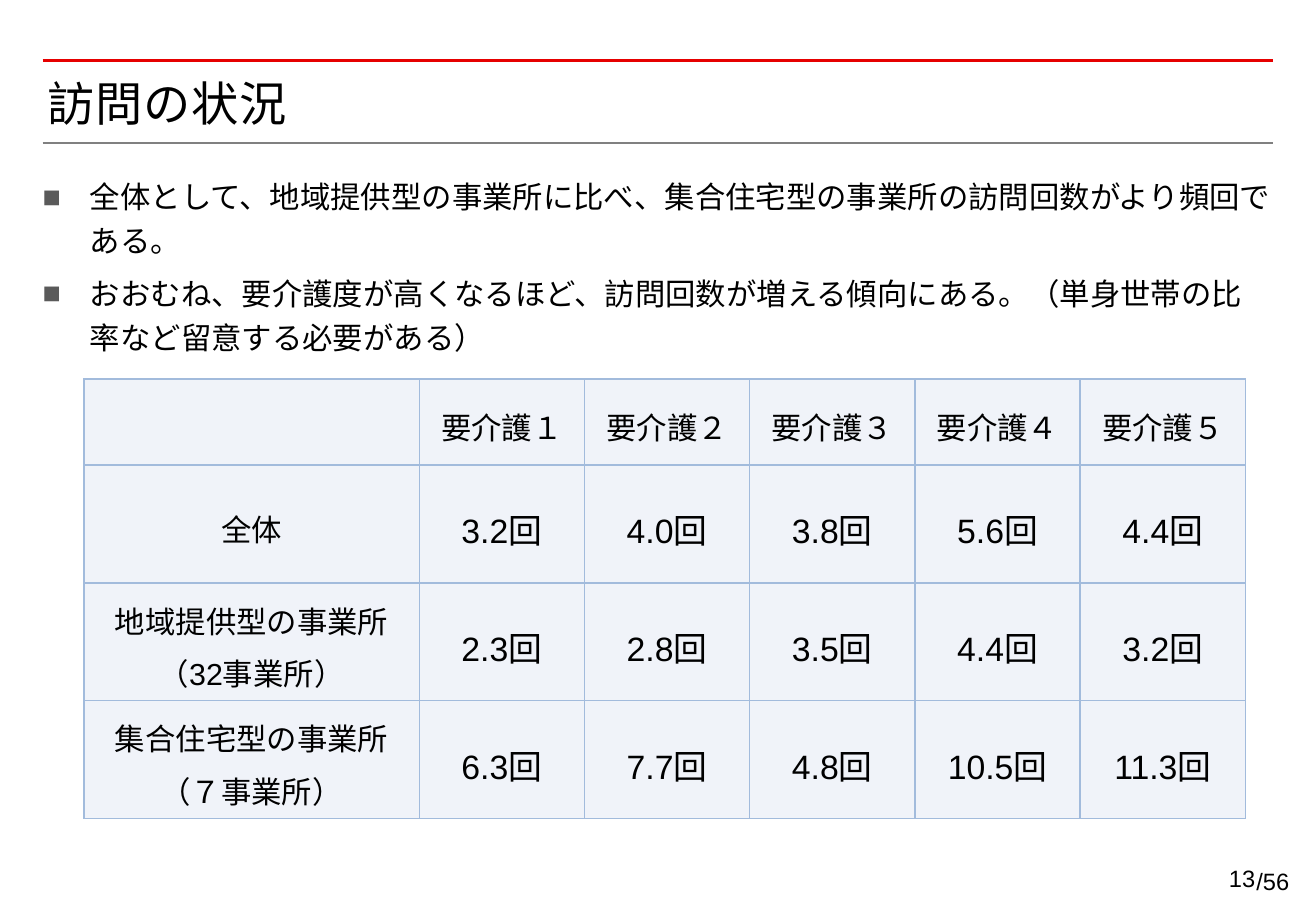
from lxml import etree
from pptx import Presentation
from pptx import util as u
from pptx.dml.color import RGBColor
from pptx.enum import shapes, text
from pptx.oxml import ns

COLORS = {"text": "000000", "red": "E60000", "gray": "808080", "bullet": "5A5A5A",
          "cell": "F0F3F9", "border": "A2BBDC"}
LATIN, JAPANESE = "Arial", "Noto Sans CJK JP"
CENTER, RIGHT = text.PP_ALIGN.CENTER, text.PP_ALIGN.RIGHT

POINTS = [
    "全体として、地域提供型の事業所に比べ、集合住宅型の事業所の訪問回数がより頻回である。",
    "おおむね、要介護度が高くなるほど、訪問回数が増える傾向にある。（単身世帯の比率など留意する必要がある）",
]
LEVELS = ["要介護１", "要介護２", "要介護３", "要介護４", "要介護５"]
VISITS = {
    "全体": ["3.2", "4.0", "3.8", "5.6", "4.4"],
    "地域提供型の事業所\v（32事業所）": ["2.3", "2.8", "3.5", "4.4", "3.2"],
    "集合住宅型の事業所\v（７事業所）": ["6.3", "7.7", "4.8", "10.5", "11.3"],
}


def color(name):
    return RGBColor.from_string(COLORS[name])


def add_xml(parent, tag, **attributes):
    return etree.SubElement(parent, ns.qn(tag), attributes)


def format_runs(para, size, font=LATIN):
    for span in para.runs:
        span.font.size = u.Pt(size)
        span.font.name = font
        span.font.color.rgb = color("text")


def add_text(slide, left, top, width, height, lines, size, font=LATIN,
             margins=(0, 0.05, 0, 0.05), align=None):
    box = slide.shapes.add_textbox(*map(u.Inches, (left, top, width, height)))
    frame = box.text_frame
    frame.word_wrap = True
    (frame.margin_left, frame.margin_top,
     frame.margin_right, frame.margin_bottom) = map(u.Inches, margins)
    frame.text = "\n".join(lines)
    for para in frame.paragraphs:
        para.alignment = align
        format_runs(para, size, font)
    return frame


def add_bullets(frame):
    for index, para in enumerate(frame.paragraphs):
        para.line_spacing = 1.2
        para.space_before = u.Pt(5.4 if index else 0)
        props = para._p.get_or_add_pPr()
        props.set("marL", str(u.Inches(0.39)))
        props.set("indent", str(u.Inches(-0.39)))
        add_xml(add_xml(props, "a:buClr"), "a:srgbClr", val=COLORS["bullet"])
        add_xml(props, "a:buFont", typeface=LATIN)
        add_xml(props, "a:buChar", char="■")


def add_rule(slide, top, name, width):
    line = slide.shapes.add_connector(
        shapes.MSO_CONNECTOR.STRAIGHT,
        u.Inches(0.35), u.Inches(top), u.Inches(10.48), u.Inches(top))
    line.line.color.rgb = color(name)
    line.line.width = u.Pt(width)
    add_xml(line._element.spPr, "a:effectLst")


def fill_cell(cell, label, size):
    props = cell._tc.get_or_add_tcPr()
    for side in ("a:lnL", "a:lnR", "a:lnT", "a:lnB"):
        border = add_xml(props, side, w=str(u.Pt(1)))
        add_xml(add_xml(border, "a:solidFill"), "a:srgbClr", val=COLORS["border"])
    cell.fill.solid()
    cell.fill.fore_color.rgb = color("cell")
    cell.vertical_anchor = text.MSO_ANCHOR.MIDDLE
    cell.margin_left = cell.margin_right = u.Inches(0.07)
    cell.margin_top = cell.margin_bottom = 0
    cell.text_frame.text = label
    para = cell.text_frame.paragraphs[0]
    para.alignment = CENTER
    para.line_spacing = 1.2
    format_runs(para, size)


def add_visit_table(slide):
    rows = [["", *LEVELS]]
    rows += [[label, *(f"{count}回" for count in counts)]
             for label, counts in VISITS.items()]
    table = slide.shapes.add_table(
        len(rows), len(rows[0]), u.Inches(0.69), u.Inches(3.12),
        u.Inches(9.56), u.Inches(3.62)).table
    for index, column in enumerate(table.columns):
        column.width = u.Inches(1.36 if index else 2.76)
    for index, row in enumerate(table.rows):
        row.height = u.Inches(0.97 if index else 0.71)
    for r, labels in enumerate(rows):
        for c, label in enumerate(labels):
            fill_cell(table.cell(r, c), label, 20 if r and c else 18)


def main():
    deck = Presentation()
    deck.slide_width, deck.slide_height = u.Inches(10.83), u.Inches(7.5)
    slide = deck.slides.add_slide(deck.slide_layouts[6])
    add_rule(slide, 0.5, "red", 2)
    add_rule(slide, 1.18, "gray", 1.25)
    title = add_text(slide, 0.39, 0.57, 10.09, 0.56, ["訪問の状況"], 28, JAPANESE,
                     margins=(0, 0.04, 0, 0.05))
    title.paragraphs[0].runs[0].font._element.set("spc", "50")
    add_bullets(add_text(slide, 0.35, 1.41, 10.11, 1.16, POINTS, 18,
                         margins=(0, 0, 0, 0)))
    add_visit_table(slide)
    add_text(slide, 9.84, 7.06, 0.49, 0.34, ["13"], 14, align=RIGHT)
    total = add_text(slide, 10.24, 7.04, 0.49, 0.36, ["/56"], 14,
                     margins=(0.1, 0.05, 0.1, 0.05))
    total.paragraphs[0].line_spacing = 1.2
    deck.save("out.pptx")


if __name__ == "__main__":
    main()
